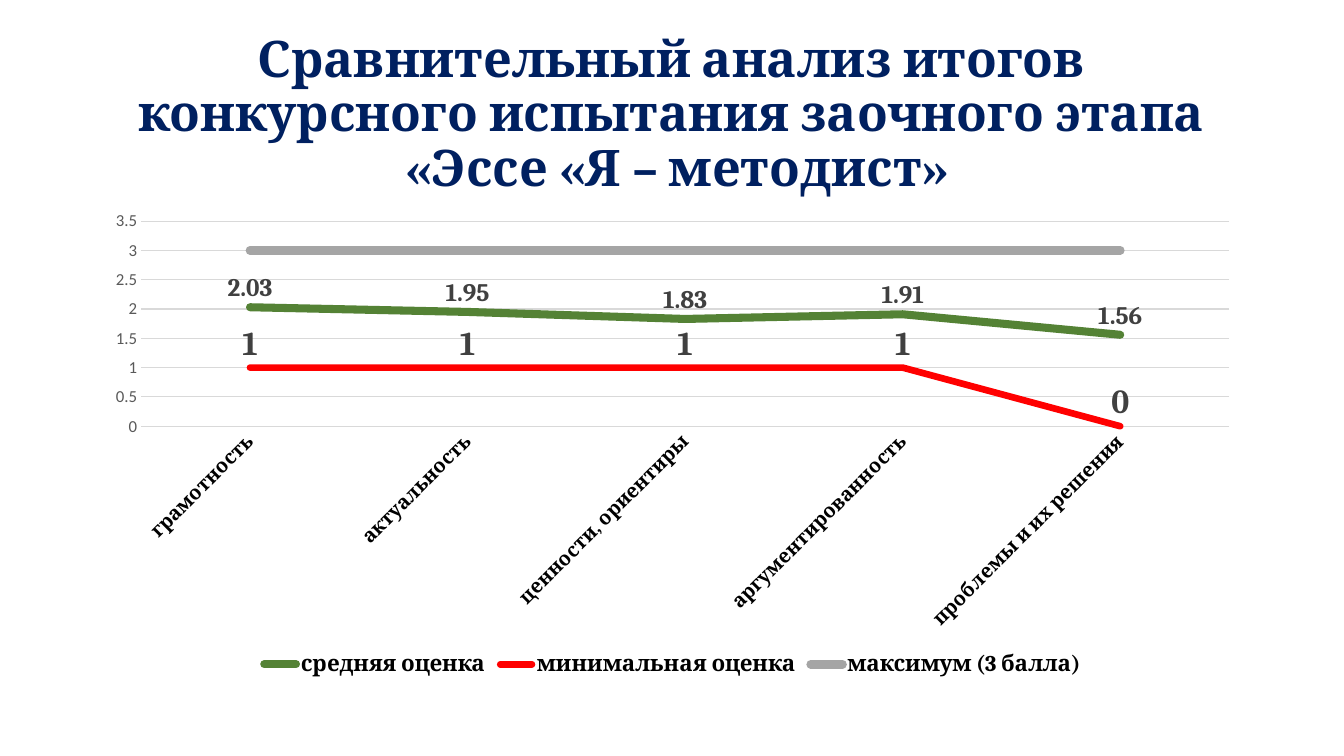
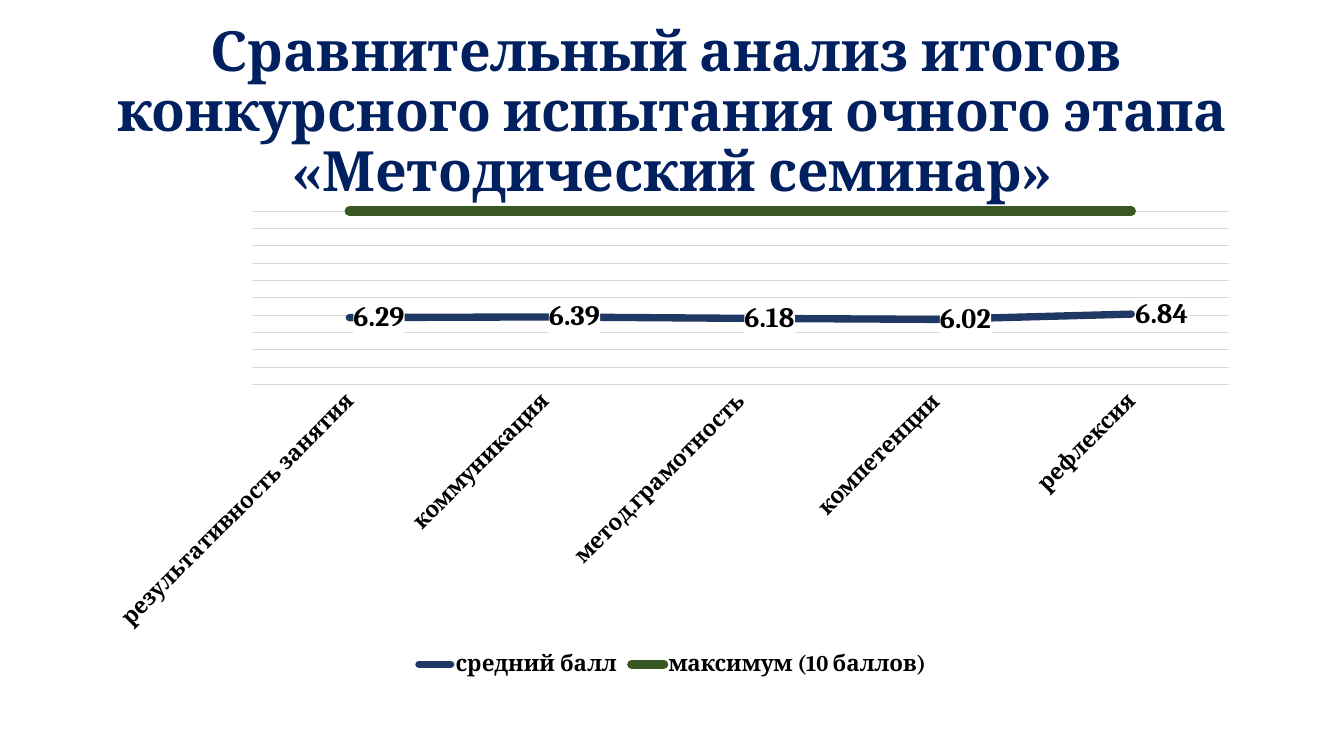
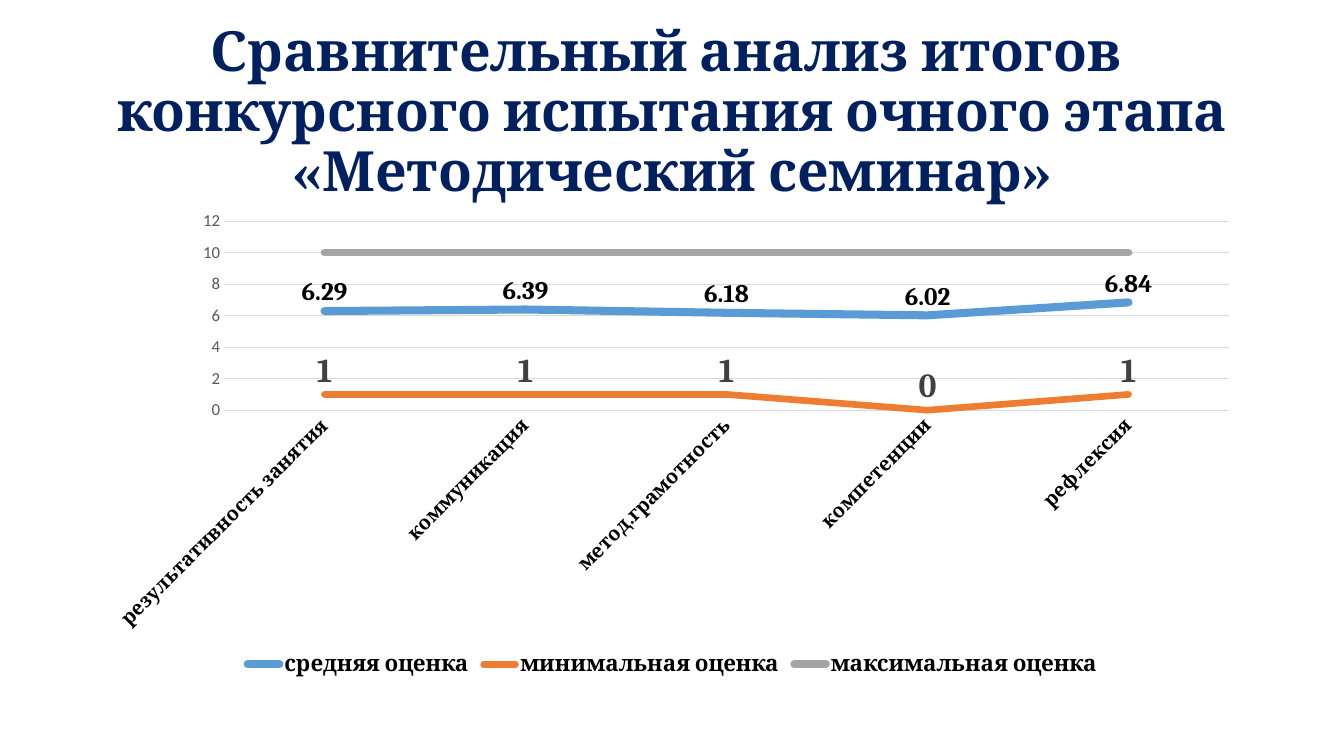
from lxml import etree
from pptx import Presentation
from pptx import util as u
from pptx.chart.data import CategoryChartData
from pptx.dml.color import RGBColor
from pptx.enum import chart as charts, text
from pptx.oxml import parse_xml
from pptx.oxml.ns import nsdecls

COLORS = {
    "title": "002060", "black": "000000", "label": "404040", "axis": "595959",
    "grid": "D9D9D9", "green": "548235", "red": "FF0000", "gray": "A5A5A5",
    "navy": "203864", "forest": "385723", "blue": "5B9BD5", "orange": "ED7D31",
}
SERIF, SANS = "Cambria", "Calibri"
WIDTH, HEIGHT = 13.33, 7.5
CONTENT_LEFT, CONTENT_WIDTH = 0.92, 11.5
TITLE_BOX = (CONTENT_LEFT, 0.4, CONTENT_WIDTH, 1.45)
CHART_BOX = (CONTENT_LEFT, 2, CONTENT_WIDTH, 4.76)

SEMINAR_TITLE = [["Сравнительный анализ итогов ",
                  "конкурсного испытания очного этапа «Методический семинар»"]]
SEMINAR_CRITERIA = ["результативность занятия", "коммуникация",
                    "метод.грамотность", "компетенции", "рефлексия"]
SEMINAR_MEANS = [6.29, 6.39, 6.18, 6.02, 6.84]

# series: name, values, color, line width, label size and color
SLIDES = [
    {
        "title": [["Сравнительный анализ итогов ",
                   "конкурсного испытания заочного этапа "],
                  ["«Эссе «Я – методист»"]],
        "title_size": 36, "title_box": (0.46, 0.42, 12.51, 1.45),
        "stacked": False, "category_size": 14,
        "categories": ["грамотность", "актуальность", "ценности, ориентиры",
                       "аргументированность", "проблемы и их решения"],
        "series": [
            ("средняя оценка", [2.03, 1.95, 1.83, 1.91, 1.56], "green", 5.75, (18, "label")),
            ("минимальная оценка", [1, 1, 1, 1, 0], "red", 4.75, (24, "label")),
            ("максимум (3 балла)", [3] * 5, "gray", 6.25, None),
        ],
    },
    {
        "title": SEMINAR_TITLE, "title_size": 39.6, "title_box": TITLE_BOX,
        "stacked": True, "category_size": 16, "categories": SEMINAR_CRITERIA,
        "series": [
            ("средний балл", SEMINAR_MEANS, "navy", 5.25, (20, "black")),
            ("максимум (10 баллов)", [10] * 5, "forest", 6.75, None),
        ],
    },
    {
        "title": SEMINAR_TITLE, "title_size": 39.6, "title_box": TITLE_BOX,
        "stacked": False, "category_size": 14, "categories": SEMINAR_CRITERIA,
        "series": [
            ("средняя оценка", SEMINAR_MEANS, "blue", 5.75, (18, "black")),
            ("минимальная оценка", [1, 1, 1, 0, 1], "orange", 4.75, (24, "label")),
            ("максимальная оценка", [10] * 5, "gray", 5.5, None),
        ],
    },
]


def color(name):
    return RGBColor.from_string(COLORS[name])


def inches(box):
    return [u.Inches(length) for length in box]


def style_font(font, size, color_name, name=SERIF, bold=True):
    font.size, font.name, font.bold = u.Pt(size), name, bold
    font.color.rgb = color(color_name)


def style_line(line, color_name, width):
    line.color.rgb = color(color_name)
    line.width = u.Pt(width)


def fill_title(title, content):
    title.left, title.top, title.width, title.height = inches(content["title_box"])
    frame = title.text_frame
    frame.word_wrap = True
    frame.auto_size = text.MSO_AUTO_SIZE.NONE
    frame.vertical_anchor = text.MSO_ANCHOR.MIDDLE
    for index, lines in enumerate(content["title"]):
        paragraph = frame.add_paragraph() if index else frame.paragraphs[0]
        paragraph.alignment = text.PP_ALIGN.CENTER
        paragraph.line_spacing = 0.9
        for number, line in enumerate(lines):
            if number:
                paragraph.add_line_break()
            run = paragraph.add_run()
            run.text = line
            style_font(run.font, content["title_size"], "title")


def style_axes(chart, content):
    categories, values = chart.category_axis, chart.value_axis
    for axis in (categories, values):
        axis.major_tick_mark = axis.minor_tick_mark = charts.XL_TICK_MARK.NONE
    style_font(categories.tick_labels.font, content["category_size"], "black")
    categories._element.txPr.find("{*}bodyPr").set("rot", str(-45 * 60000))
    style_line(categories.format.line, "grid", 0.75)
    values.has_major_gridlines = True
    style_line(values.major_gridlines.format.line, "grid", 0.75)
    if content["stacked"]:
        values.visible = False
    else:
        style_font(values.tick_labels.font, 12, "axis", SANS, False)
        values.format.line.fill.background()


def style_series(series, color_name, width, label, stacked):
    series.smooth = False
    series.marker.style = charts.XL_MARKER_STYLE.NONE
    style_line(series.format.line, color_name, width)
    series.format.line._ln.set("cap", "rnd")
    if not label:
        return
    labels = series.data_labels
    labels.show_value = True
    style_font(labels.font, *label)
    if stacked:
        labels._element.find("{*}txPr").addprevious(parse_xml(
            f'<c:spPr {nsdecls("c", "a")}><a:solidFill>'
            '<a:srgbClr val="FFFFFF"/></a:solidFill></c:spPr>'))
    else:
        labels.position = charts.XL_LABEL_POSITION.ABOVE


def add_line_chart(slide, content):
    data = CategoryChartData()
    data.categories = content["categories"]
    for name, values, *_ in content["series"]:
        data.add_series(name, values)
    kinds = charts.XL_CHART_TYPE
    kind = kinds.LINE_STACKED_100 if content["stacked"] else kinds.LINE
    chart = slide.shapes.add_chart(kind, *inches(CHART_BOX), data).chart
    style_font(chart.font, 10, "black", SANS, False)
    chart.has_title = False
    chart.plots[0].vary_by_categories = False
    chart.has_legend = True
    chart.legend.position = charts.XL_LEGEND_POSITION.BOTTOM
    chart.legend.include_in_layout = False
    style_font(chart.legend.font, 16, "black")
    style_axes(chart, content)
    for series, (_, _, *style) in zip(chart.plots[0].series, content["series"]):
        style_series(series, *style, content["stacked"])


def main():
    presentation = Presentation()
    presentation.slide_width, presentation.slide_height = inches((WIDTH, HEIGHT))
    for content in SLIDES:
        slide = presentation.slides.add_slide(presentation.slide_layouts[5])
        fill_title(slide.shapes.title, content)
        add_line_chart(slide, content)
    presentation.save("out.pptx")


if __name__ == "__main__":
    main()
